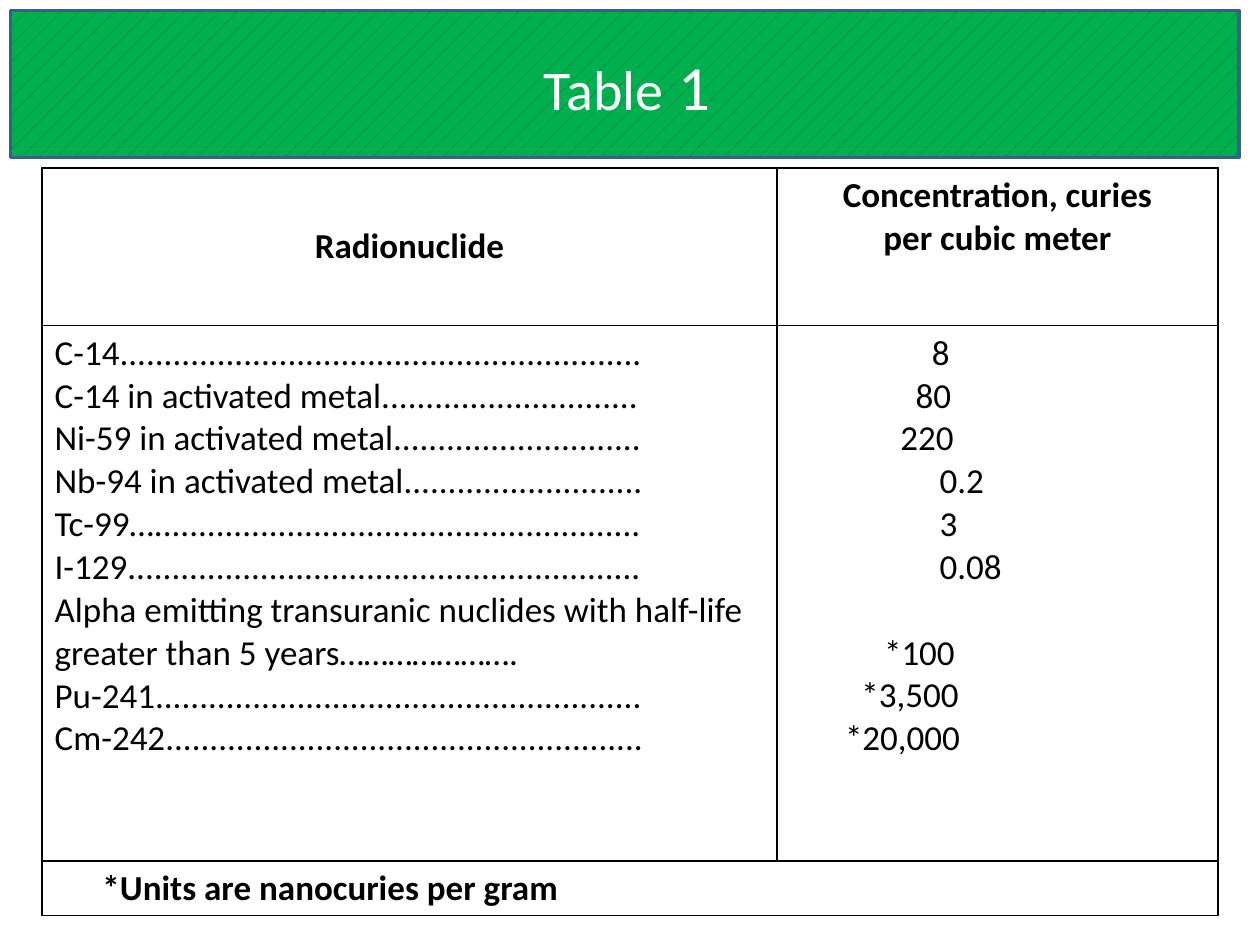
"""Build a slide with a table of radionuclide concentration limits."""
from lxml import etree
from pptx import Presentation, util as u
from pptx.dml.color import RGBColor
from pptx.enum import dml, shapes, text
from pptx.oxml import ns

GREEN = RGBColor(0x00, 0xB0, 0x50)
DARK_GREEN = RGBColor(0x00, 0x6C, 0x00)
BLUE = RGBColor(0x3A, 0x5F, 0x8C)
WHITE = RGBColor(0xFF, 0xFF, 0xFF)
BLACK = RGBColor(0x00, 0x00, 0x00)
FONT = "Calibri"
GRID = u.Inches(10) // 120
COLUMNS = (70, 42)
ROWS = (15, 51, 4)
LINE_HEIGHT = u.Pt(24.4)

NUCLIDES = (
    "C-14...........................................................",
    "C-14 in activated metal.............................",
    "Ni-59 in activated metal............................",
    "Nb-94 in activated metal...........................",
    "Tc-99….......................................................",
    "I-129..........................................................",
    "Alpha emitting transuranic nuclides with half-life greater than 5 years………………….",
    "Pu-241.......................................................",
    "Cm-242......................................................",
)
LIMITS = (("8", 1.13), ("80", 1), ("220", 0.88), ("0.2", 1.19), ("3", 1.19),
          ("0.08", 1.19), ("*100", 0.75), ("*3,500", 0.57), ("*20,000", 0.44))


def style(run, size, color, bold=False):
    run.font.name = FONT
    run.font.size = u.Pt(size)
    run.font.color.rgb = color
    run.font.bold = bold


def write(cell, lines, bold=False, align=text.PP_ALIGN.LEFT):
    cell.text_frame.text = "\n".join(lines)
    for paragraph in cell.text_frame.paragraphs:
        paragraph.alignment = align
        for run in paragraph.runs:
            style(run, 20, BLACK, bold)


presentation = Presentation()
presentation.slide_width, presentation.slide_height = 120 * GRID, 90 * GRID
slide = presentation.slides.add_slide(presentation.slide_layouts[6])

banner = slide.shapes.add_shape(shapes.MSO_SHAPE.RECTANGLE, GRID, GRID, 117 * GRID, 14 * GRID)
banner.shadow.inherit = False
banner.fill.patterned()
banner.fill.pattern = dml.MSO_PATTERN.PERCENT_5
banner.fill.fore_color.rgb = DARK_GREEN
banner.fill.back_color.rgb = GREEN
banner.line.color.rgb = BLUE
banner.line.width = u.Pt(2)

title = slide.shapes.add_textbox(u.Inches(0.1), u.Inches(0.1), 117 * GRID, u.Inches(1.15))
title.text_frame.word_wrap = True
title.text_frame.vertical_anchor = text.MSO_ANCHOR.MIDDLE
paragraph = title.text_frame.paragraphs[0]
paragraph.alignment = text.PP_ALIGN.CENTER
for words, size in (("Table", 32), (" 1", 36)):
    run = paragraph.add_run()
    run.text = words
    style(run, size, WHITE)

table = slide.shapes.add_table(len(ROWS), len(COLUMNS), 4 * GRID, 16 * GRID,
                               sum(COLUMNS) * GRID, sum(ROWS) * GRID).table
table.first_row = table.horz_banding = False
for column, width in zip(table.columns, COLUMNS):
    column.width = width * GRID
for row, height in zip(table.rows, ROWS):
    row.height = height * GRID

for cell in table.iter_cells():
    properties = cell._tc.get_or_add_tcPr()
    for side in ("lnL", "lnR", "lnT", "lnB"):
        border = etree.SubElement(properties, ns.qn(f"a:{side}"), w=str(u.Pt(1)))
        solid = etree.SubElement(border, ns.qn("a:solidFill"))
        etree.SubElement(solid, ns.qn("a:srgbClr"), val=str(BLACK))
    cell.fill.background()

write(table.cell(0, 0), ["Radionuclide"], True, text.PP_ALIGN.CENTER)
table.cell(0, 0).vertical_anchor = text.MSO_ANCHOR.MIDDLE
write(table.cell(0, 1), ["Concentration, curies", "per cubic meter"], True, text.PP_ALIGN.CENTER)
write(table.cell(1, 0), NUCLIDES)

limits = table.cell(1, 1)
write(limits, [value for value, indent in LIMITS])
for paragraph, (value, indent) in zip(limits.text_frame.paragraphs, LIMITS):
    paragraph._p.get_or_add_pPr().set("marL", str(u.Inches(indent)))
    if value == "*100":
        paragraph.space_before = LINE_HEIGHT

footnote = table.cell(2, 0)
footnote.merge(table.cell(2, 1))
write(footnote, ["*Units are nanocuries per gram"], True)
footnote.text_frame.paragraphs[0]._p.get_or_add_pPr().set("marL", str(u.Inches(0.38)))

presentation.save("out.pptx")
